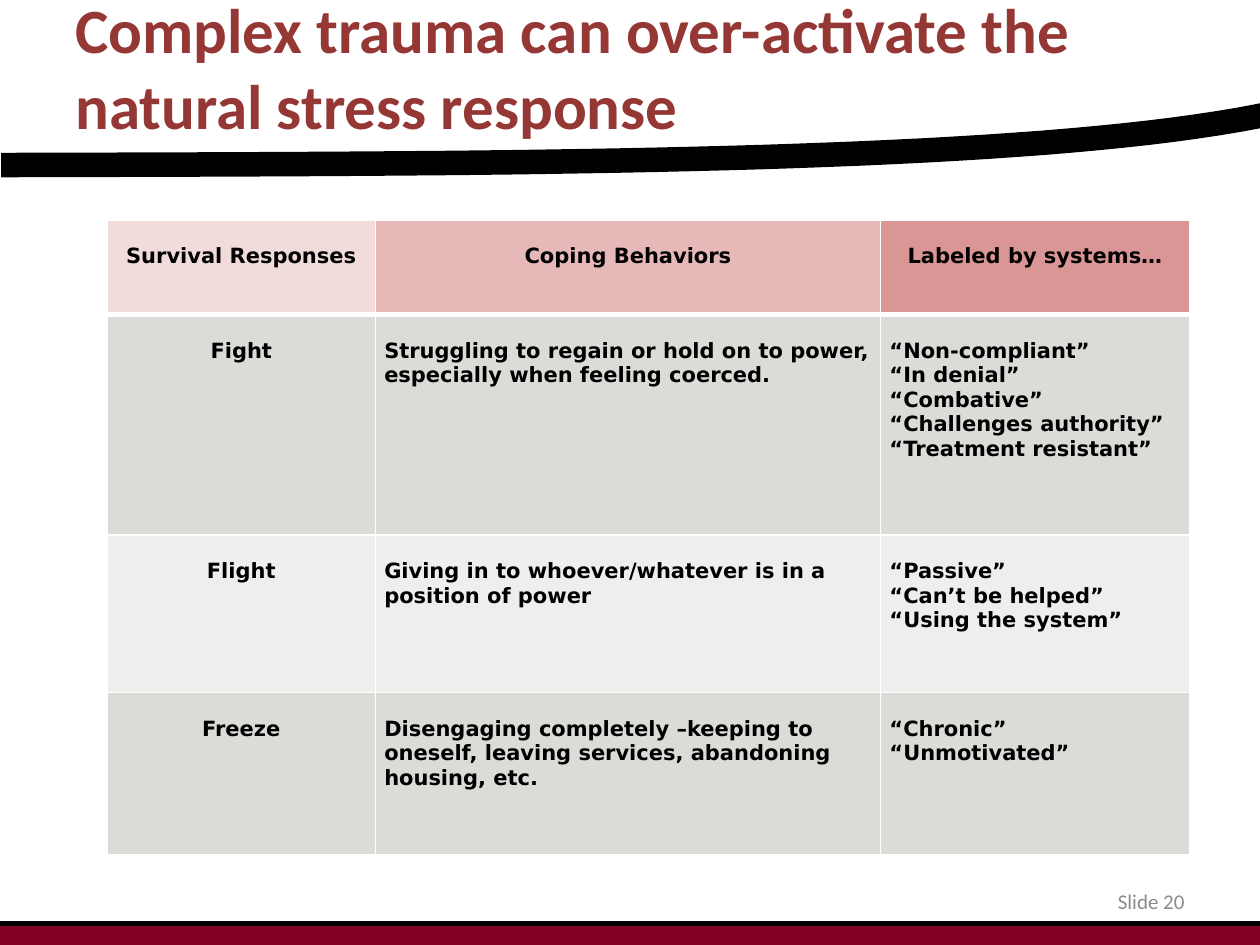
from lxml.etree import SubElement
from pptx import Presentation
from pptx.dml.color import RGBColor as RGB
from pptx.enum.shapes import MSO_CONNECTOR as CONN, MSO_SHAPE as SHAPE
from pptx.enum.text import MSO_ANCHOR as ANCHOR, PP_ALIGN as ALIGN
from pptx.oxml.ns import qn
from pptx.util import Inches, Pt

W, H = Inches(10), Inches(7.5)
COLORS = {
    "title": "953735", "text": "000000", "number": "8C8C8C",
    "rule": "000000", "paper": "FFFFFF", "footer": "820024",
}
HEADER_FILLS = ["F2DCDB", "E6B9B8", "D99694"]
BAND_FILLS = ["DBDBD8", "EEEEED"]
COLS = [2.13, 4.01, 2.45]
ROWS = [0.75, 1.75, 1.25, 1.29]
RESPONSES = [
    ["Survival Responses", "Coping Behaviors", "Labeled by systems…"],
    ["Fight",
     "Struggling to regain or hold on to power, especially when feeling coerced.",
     "“Non-compliant”\n“In denial”\n“Combative”\n“Challenges authority”\n“Treatment resistant”"],
    ["Flight",
     "Giving in to whoever/whatever is in a position of power",
     "“Passive”\n“Can’t be helped”\n“Using the system”"],
    ["Freeze",
     "Disengaging completely –keeping to oneself, leaving services, abandoning housing, etc.",
     "“Chronic”\n“Unmotivated”"],
]


def rgb(name):
    return RGB.from_string(COLORS[name])


def box(x, y, w, h):
    """Turn shares of the slide's width and height into lengths."""
    return int(W * x), int(H * y), int(W * w), int(H * h)


def style_text(tf, font, size, color, align=ALIGN.LEFT, bold=False):
    for p in tf.paragraphs:
        p.alignment = align
        for r in p.runs:
            r.font.name, r.font.size, r.font.bold = font, Pt(size), bold
            r.font.color.rgb = rgb(color)


def add_text(s, area, text, size, color, **style):
    tf = s.shapes.add_textbox(*area).text_frame
    tf.word_wrap = True
    tf.vertical_anchor = ANCHOR.MIDDLE
    tf.text = text
    style_text(tf, "Calibri", size, color, **style)
    return tf


def set_borders(cell, widths):
    """Draw white borders; widths are points for left, right, top, bottom."""
    tc_pr = cell._tc.get_or_add_tcPr()
    for i, (side, width) in enumerate(zip("LRTB", widths)):
        ln = SubElement(tc_pr, qn(f"a:ln{side}"), w=str(Pt(width)))
        fill = SubElement(ln, qn("a:solidFill"))
        SubElement(fill, qn("a:srgbClr"), val=COLORS["paper"])
        tc_pr.insert(i, ln)


def fill_cell(cell, text, row, col):
    cell.margin_left = cell.margin_right = Inches(0.07)
    cell.margin_top, cell.margin_bottom = Inches(0.19), 0
    cell.text = text
    align = ALIGN.CENTER if row == 0 or col == 0 else ALIGN.LEFT
    style_text(cell.text_frame, "DejaVu Sans", 12, "text", align, bold=True)
    cell.fill.solid()
    color = HEADER_FILLS[col] if row == 0 else BAND_FILLS[(row - 1) % 2]
    cell.fill.fore_color.rgb = RGB.from_string(color)
    set_borders(cell, (1, 1, 3 if row == 1 else 1, 3 if row == 0 else 1))


def add_response_table(s, x, y):
    area = int(W * x), int(H * y), Inches(sum(COLS)), Inches(sum(ROWS))
    table = s.shapes.add_table(len(ROWS), len(COLS), *area).table
    for column, width in zip(table.columns, COLS):
        column.width = Inches(width)
    for i, (row, height) in enumerate(zip(table.rows, ROWS)):
        row.height = Inches(height)
        for j, cell in enumerate(row.cells):
            fill_cell(cell, RESPONSES[i][j], i, j)


def bezier(points, steps=40):
    """Sample a cubic curve given by four points."""
    for i in range(steps + 1):
        t = i / steps
        weights = (1 - t) ** 3, 3 * t * (1 - t) ** 2, 3 * t * t * (1 - t), t ** 3
        yield tuple(Inches(sum(w * p[k] for w, p in zip(weights, points)))
                    for k in (0, 1))


def add_swoosh(s):
    start, *rest = bezier([(0.01, 1.31), (4.25, 1.3), (8.48, 1.3), (10.27, 0.86)])
    builder = s.shapes.build_freeform(*start)
    builder.add_line_segments(rest, close=False)
    sp = builder.convert_to_shape()
    sp.shadow.inherit = False
    sp.fill.solid()
    sp.fill.fore_color.rgb = rgb("paper")
    sp.line.color.rgb = rgb("rule")
    sp.line.width = Pt(14)


def add_footer(s, height):
    left, top, width, depth = box(0, 1 - height, 1, height)
    sp = s.shapes.add_shape(SHAPE.RECTANGLE, left, top, width, depth)
    sp.shadow.inherit = False
    sp.fill.solid()
    sp.fill.fore_color.rgb = rgb("footer")
    sp.line.fill.background()
    rule = s.shapes.add_connector(CONN.STRAIGHT, left, top, width, top)
    rule.line.color.rgb = rgb("rule")
    rule.line.width = Pt(3)
    SubElement(rule._element.spPr, qn("a:effectLst"))


def main():
    prs = Presentation()
    prs.slide_width, prs.slide_height = W, H
    s = prs.slides.add_slide(prs.slide_layouts[6])
    title = add_text(s, box(0.05, 0, 0.85, 0.23),
                     "Complex trauma can over-activate the natural stress response",
                     36, "title", bold=True)
    title.margin_top, title.margin_bottom = 0, Inches(0.67)
    add_response_table(s, 0.085, 0.233)
    add_swoosh(s)
    add_footer(s, 0.023)
    add_text(s, box(0.717, 0.927, 0.233, 0.053), "Slide 20", 12, "number",
             align=ALIGN.RIGHT)
    prs.save("out.pptx")


if __name__ == "__main__":
    main()
